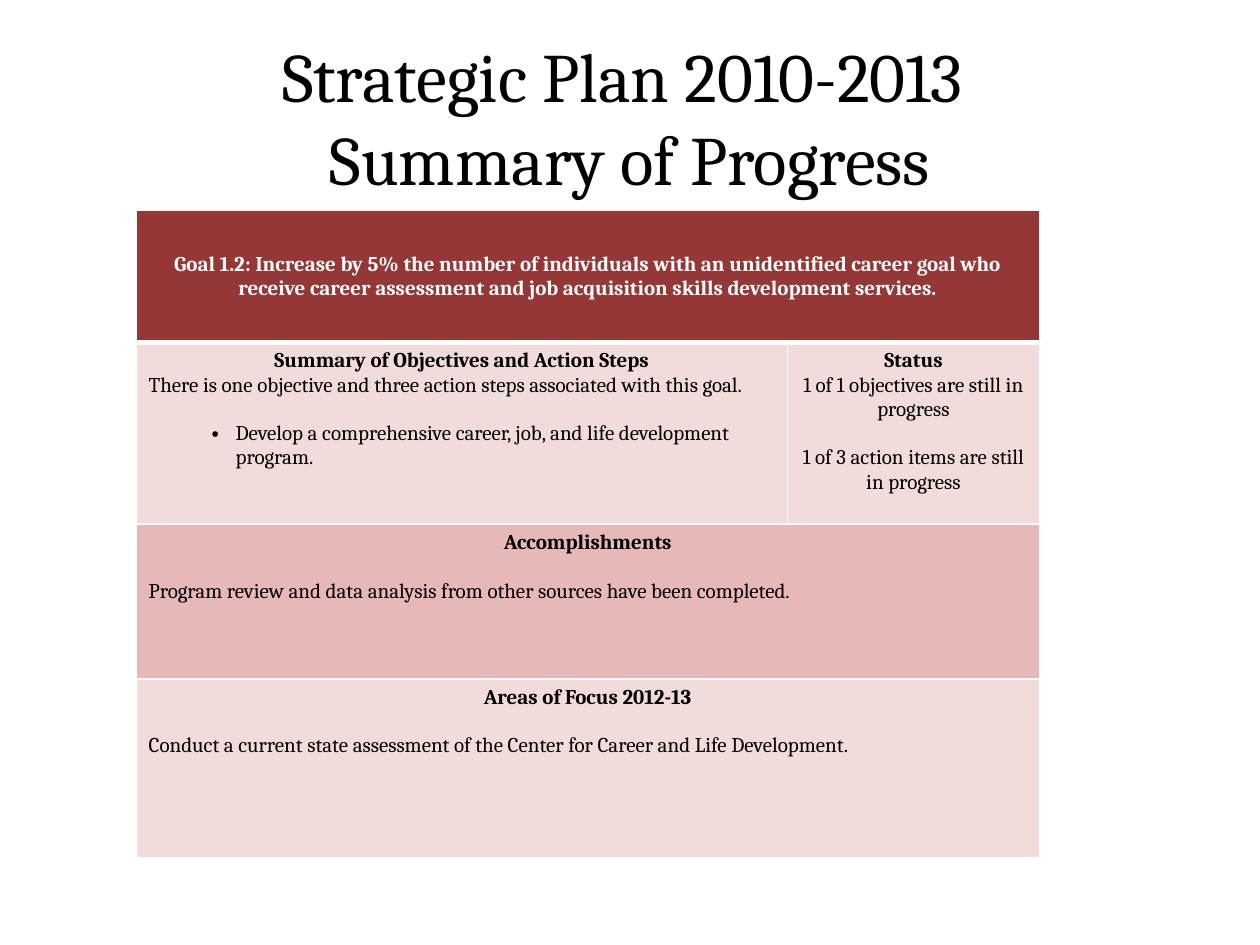
from lxml.etree import SubElement
from pptx import Presentation
from pptx.dml.color import RGBColor
from pptx.enum.text import MSO_ANCHOR, PP_ALIGN
from pptx.oxml.ns import qn
from pptx.util import Inches, Pt

BLACK = RGBColor(0, 0, 0)
WHITE = RGBColor(255, 255, 255)
MAROON = RGBColor(0x95, 0x37, 0x35)
PALE = RGBColor(0xF2, 0xDC, 0xDB)
ROSE = RGBColor(0xE6, 0xB9, 0xB8)
FONT = "Cambria"
GAP = 14

TITLE = "Strategic Plan 2010-2013 \vSummary of Progress"
HEAD = dict(bold=True, align=PP_ALIGN.CENTER)
GOAL = dict(HEAD, color=WHITE)
BODY = dict(align=PP_ALIGN.LEFT)
SPACED = dict(BODY, before=GAP)
CENTER = dict(align=PP_ALIGN.CENTER)
BULLET = dict(SPACED, bullet="•")

COLS = [5.17, 2]
ROWS = [
    (1.05, MAROON, [[
        ("Goal 1.2: Increase by 5% the number of individuals with an unidentified career goal "
         "who receive career assessment and job acquisition skills development services.", GOAL)]]),
    (1.44, PALE, [
        [("Summary of Objectives and Action Steps", HEAD),
         ("There is one objective and three action steps associated with this goal.", BODY),
         ("Develop a comprehensive career, job, and life development program.", BULLET)],
        [("Status", HEAD),
         ("1 of 1 objectives are still in progress", CENTER),
         ("1 of 3 action items are still in progress", dict(CENTER, before=GAP))]]),
    (1.23, ROSE, [[
        ("Accomplishments", HEAD),
        ("Program review and data analysis from other sources have been completed.", SPACED)]]),
    (1.42, PALE, [[
        ("Areas of Focus 2012-13", HEAD),
        ("Conduct a current state assessment of the Center for Career and Life Development.", SPACED)]]),
]


def set_font(font, **values):
    font.color.rgb = values.pop("color", BLACK)
    for name, value in dict(name=FONT, bold=False, **values).items() if "bold" not in values \
            else dict(name=FONT, **values).items():
        setattr(font, name, value)


def set_borders(cell, widths):
    tcPr = cell._tc.get_or_add_tcPr()
    for side, width in widths.items():
        ln = SubElement(tcPr, qn(f"a:ln{side}"), w=str(Pt(width)))
        fill = SubElement(ln, qn("a:solidFill"))
        SubElement(fill, qn("a:srgbClr"), val=str(WHITE))


def fill_text(tf, items):
    for i, (text, style) in enumerate(items):
        p = tf.paragraphs[0] if i == 0 else tf.add_paragraph()
        p.alignment = style["align"]
        if "before" in style:
            p.space_before = Pt(style["before"])
        if "bullet" in style:
            pPr = p._p.get_or_add_pPr()
            pPr.set("marL", str(Inches(0.69)))
            pPr.set("indent", str(Inches(-0.19)))
            SubElement(pPr, qn("a:buFont"), typeface="Arial")
            SubElement(pPr, qn("a:buChar"), char=style["bullet"])
        r = p.add_run()
        r.text = text
        set_font(r.font, size=Pt(12), bold=style.get("bold", False), color=style.get("color", BLACK))


def add_title(s):
    title = s.shapes.title
    box = dict(left=0.5, top=0.3, width=9, height=1.25)
    for name, value in box.items():
        setattr(title, name, Inches(value))
    tf = title.text_frame
    tf.text = TITLE
    tf.word_wrap = True
    tf.vertical_anchor = MSO_ANCHOR.MIDDLE
    p = tf.paragraphs[0]
    p.alignment = PP_ALIGN.CENTER
    for r in p.runs:
        set_font(r.font, size=Pt(39.6))


def add_plan_table(s):
    height = sum(row[0] for row in ROWS)
    table = s.shapes.add_table(len(ROWS), len(COLS), Inches(1.08), Inches(1.67),
                               Inches(sum(COLS)), Inches(height)).table
    table.first_row = table.horz_banding = False
    for column, width in zip(table.columns, COLS):
        column.width = Inches(width)
    for i, (row_height, color, texts) in enumerate(ROWS):
        table.rows[i].height = Inches(row_height)
        for j in range(len(COLS)):
            cell = table.cell(i, j)
            set_borders(cell, dict(L=1, R=1, T=3 if i == 1 else 1, B=3 if i == 0 else 1))
            cell.fill.solid()
            cell.fill.fore_color.rgb = color
        if len(texts) == 1:
            table.cell(i, 0).merge(table.cell(i, len(COLS) - 1))
        for j, items in enumerate(texts):
            fill_text(table.cell(i, j).text_frame, items)
    table.cell(0, 0).vertical_anchor = MSO_ANCHOR.MIDDLE


def main():
    prs = Presentation()
    prs.slide_width, prs.slide_height = Inches(10), Inches(7.5)
    s = prs.slides.add_slide(prs.slide_layouts[5])
    add_title(s)
    add_plan_table(s)
    prs.save("out.pptx")


if __name__ == "__main__":
    main()
